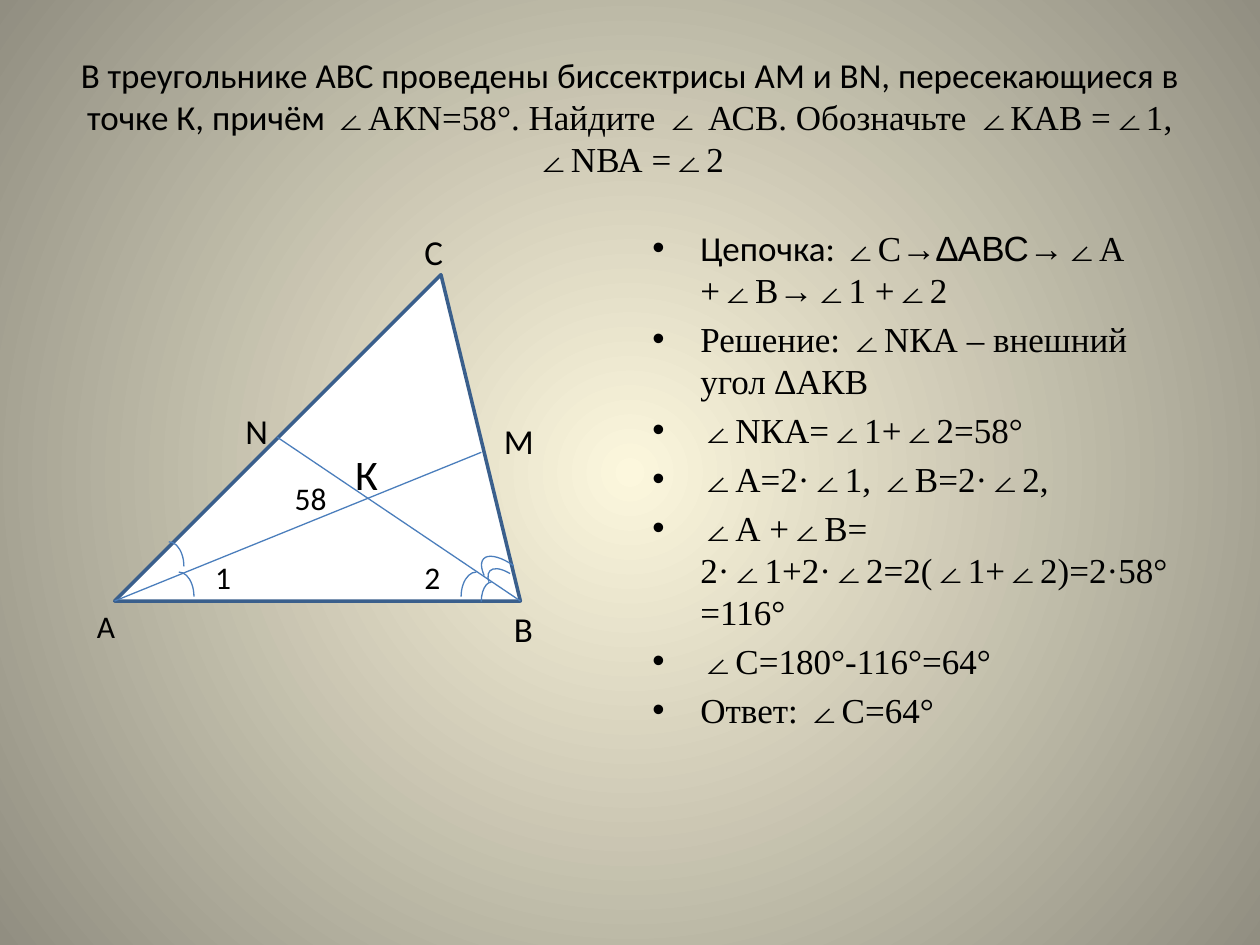
from pptx import Presentation
from pptx.dml.color import RGBColor
from pptx.enum.shapes import MSO_CONNECTOR, MSO_SHAPE
from pptx.enum.text import MSO_ANCHOR, MSO_AUTO_SIZE, PP_ALIGN
from pptx.oxml import parse_xml
from pptx.oxml.ns import nsdecls, qn
from pptx.util import Inches, Pt

ARC, TRIANGLE = MSO_SHAPE.ARC, MSO_SHAPE.ISOSCELES_TRIANGLE
STRAIGHT = MSO_CONNECTOR.STRAIGHT
CENTER, MIDDLE = PP_ALIGN.CENTER, MSO_ANCHOR.MIDDLE
NO_FIT, GROW = MSO_AUTO_SIZE.NONE, MSO_AUTO_SIZE.SHAPE_TO_FIT_TEXT

THEME = {
    "glow": "FCF7DD", "edge": "918E81", "ink": "000000",
    "paper": "FFFFFF", "side": "3A5F8C", "thin": "4B7EBC",
    "small": 18, "text": 20, "large": 24,
    "sans": "Calibri", "serif": "Times New Roman", "sign": "Arial",
}

TITLE = [
    ("В треугольнике АВС проведены биссектрисы АМ и ВN, "
     "пересекающиеся в точке К, причём ", "sans"),
    ("∠АКN=58°. Найдите ∠ АСВ. Обозначьте ∠КАВ =∠1,\n∠NВА =∠2", "serif"),
]
STEPS = [
    [("Цепочка: ", "sans"), ("∠С", "serif"), ("→∆АВС→", "sign"),
     ("∠А +∠В", "serif"), ("→", "sign"), ("∠1 +∠2", "serif")],
    [("Решение: ∠NКА – внешний угол ∆АКВ", "serif")],
    [("∠NКА=∠1+∠2=58°", "serif")],
    [("∠А=2·∠1, ∠В=2·∠2,", "serif")],
    [("∠А +∠В= 2·∠1+2·∠2=2(∠1+∠2)=2·58°=116°", "serif")],
    [("∠С=180°-116°=64°", "serif")],
    [("Ответ: ∠С=64°", "serif")],
]

# Corners of the triangle and feet of the bisectors
A, B, C = (0.91, 4.77), (4.13, 4.77), (3.5, 2.18)
M, N = (3.82, 3.59), (2.2, 3.47)
BISECTORS = [(A, M), (B, N)]

# Box, flips, turn, angles
SWEEP = (41.46, 80.37)
ARCS = [
    ((1.22, 4.3, 0.24, 0.39), "", 0, None),
    ((1.3, 4.54, 0.24, 0.39), "", 0, None),
    ((3.66, 4.54, 0.24, 0.39), "H", 0, None),
    ((3.95, 4.33, 0.27, 0.68), "HV", 313.7, SWEEP),
    ((3.82, 4.62, 0.16, 0.31), "H", 0, None),
    ((3.95, 4.46, 0.21, 0.46), "HV", 313.7, SWEEP),
]
LABELS = [
    ("А", (0.67, 4.77, 0.39, 0.4), "small"),
    ("В", (3.98, 4.77, 0.55, 0.44), "text"),
    ("М", (3.9, 3.28, 0.39, 0.44), "text"),
    ("К", (2.72, 3.51, 0.47, 0.5), "large"),
    ("N", (1.85, 3.2, 0.47, 0.44), "text"),
    ("C", (3.27, 1.78, 0.55, 0.44), "text"),
    ("58", (2.24, 3.75, 0.55, 0.4), "small"),
    ("1", (1.61, 4.38, 0.24, 0.4), "small"),
    ("2", (3.27, 4.38, 0.39, 0.4), "small"),
]


def color(name):
    return RGBColor.from_string(THEME[name])


def inches(values):
    return [Inches(v) for v in values]


def write(para, runs, size="text"):
    for text, face in runs:
        for i, line in enumerate(text.split("\n")):
            if i:
                para.add_line_break()
            run = para.add_run()
            run.text = line
            look = {"name": THEME[face], "size": Pt(THEME[size]), "bold": False}
            for key, value in look.items():
                setattr(run.font, key, value)
            run.font.color.rgb = color("ink")


def add_box(slide, box, fit):
    frame = slide.shapes.add_textbox(*inches(box)).text_frame
    frame.word_wrap = True
    frame.auto_size = fit
    return frame


def stroke(shape, name, width):
    shape.line.color.rgb = color(name)
    shape.line.width = Pt(width)


def paint_back(slide):
    """Fill the background with a gradient spreading from the centre."""
    fill = slide.background.fill
    fill.gradient()
    for stop, name in zip(fill.gradient_stops, ("glow", "edge")):
        stop.color.rgb = color(name)
    grad = slide.element.find(".//" + qn("a:gradFill"))
    grad.replace(grad.find(qn("a:lin")), parse_xml(
        f'<a:path {nsdecls("a")} path="circle">'
        '<a:fillToRect l="50000" t="50000" r="50000" b="50000"/></a:path>'))


def add_title(slide):
    title = slide.shapes.title
    place = zip(("left", "top", "width", "height"), (0.5, 0.3, 9, 1.25))
    for key, value in place:
        setattr(title, key, Inches(value))
    frame = title.text_frame
    frame.auto_size = NO_FIT
    frame.vertical_anchor = MIDDLE
    para = frame.paragraphs[0]
    para.alignment = CENTER
    write(para, TITLE)


def add_steps(slide):
    frame = add_box(slide, (5.08, 1.75, 4.42, 4.95), NO_FIT)
    for i, runs in enumerate(STEPS):
        para = frame.add_paragraph() if i else frame.paragraphs[0]
        props = para._p.get_or_add_pPr()
        props.set("marL", str(Inches(0.38)))
        props.set("indent", str(-Inches(0.38)))
        for tag in ('buFont typeface="Arial"', 'buChar char="•"'):
            props.append(parse_xml(f'<a:{tag} {nsdecls("a")}/>'))
        para.space_before = Pt(4 if i else 0)
        write(para, runs)


def add_figure(slide):
    shapes = slide.shapes
    wide, high = B[0] - A[0], A[1] - C[1]
    tri = shapes.add_shape(TRIANGLE, *inches((A[0], C[1], wide, high)))
    tri.adjustments[0] = (C[0] - A[0]) / wide
    tri.shadow.inherit = False
    tri.fill.solid()
    tri.fill.fore_color.rgb = color("paper")
    stroke(tri, "side", 2)
    for start, end in BISECTORS:
        line = shapes.add_connector(STRAIGHT, *inches(start + end))
        stroke(line, "thin", 0.75)
        line._element.spPr.append(parse_xml(f'<a:effectLst {nsdecls("a")}/>'))
    for box, flips, turn, sweep in ARCS:
        arc = shapes.add_shape(ARC, *inches(box))
        arc.shadow.inherit = False
        arc.fill.background()
        stroke(arc, "thin", 0.75)
        arc.rotation = turn
        for axis in flips:
            arc._element.spPr.xfrm.set("flip" + axis, "1")
        for i, angle in enumerate(sweep or ()):
            arc.adjustments[i] = angle
    for text, box, size in LABELS:
        write(add_box(slide, box, GROW).paragraphs[0], [(text, "sans")], size)


def main():
    deck = Presentation()
    deck.slide_width, deck.slide_height = inches((10, 7.5))
    slide = deck.slides.add_slide(deck.slide_layouts[5])
    paint_back(slide)
    add_title(slide)
    add_steps(slide)
    add_figure(slide)
    deck.save("out.pptx")


if __name__ == "__main__":
    main()
